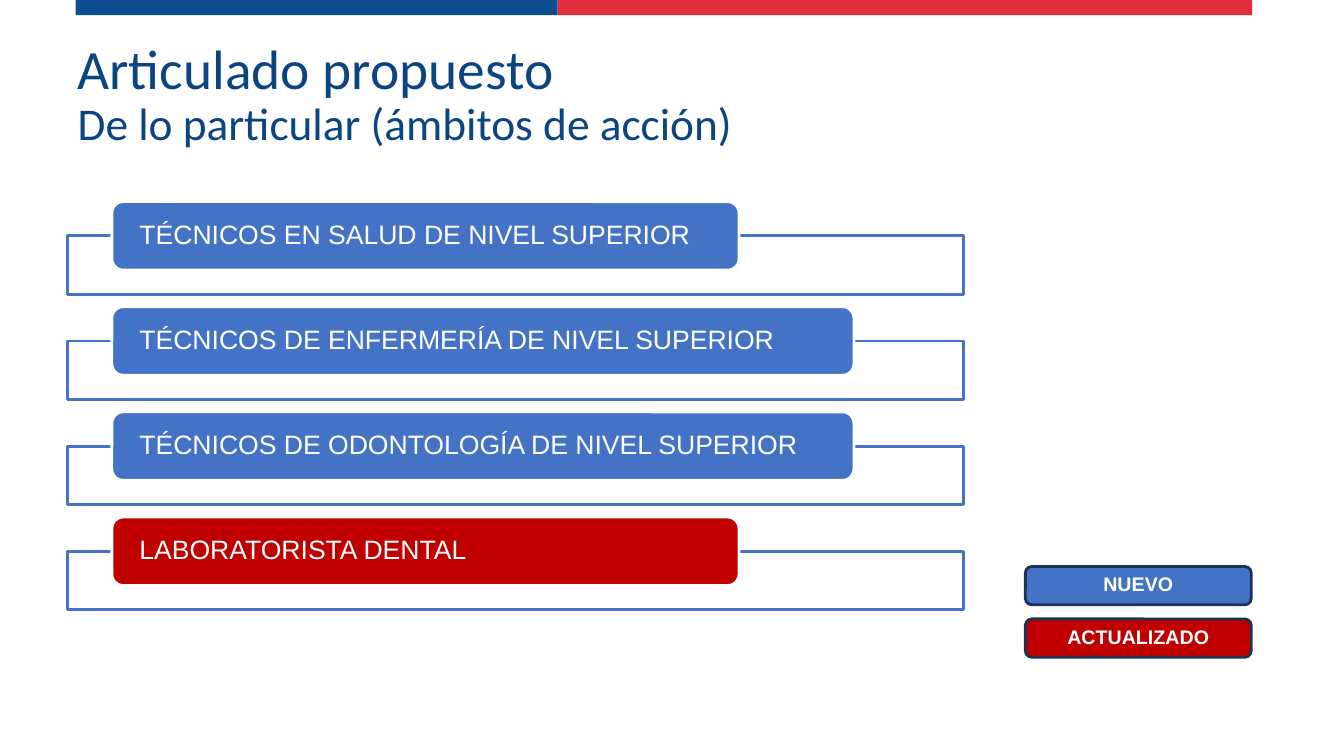
from pptx import Presentation
from pptx.dml.color import RGBColor
from pptx.enum.shapes import MSO_SHAPE
from pptx.enum.text import MSO_ANCHOR, MSO_AUTO_SIZE, PP_ALIGN
from pptx.util import Inches, Pt

COLORS = {
    "navy": "0F4E93",
    "red": "E22D3B",
    "title": "0B4581",
    "new": "4472C4",
    "updated": "C00000",
    "outline": "1E3256",
    "white": "FFFFFF",
}

FIELDS = [
    ("TÉCNICOS EN SALUD DE NIVEL SUPERIOR", 6.22, "new"),
    ("TÉCNICOS DE ENFERMERÍA DE NIVEL SUPERIOR", 7.36, "new"),
    ("TÉCNICOS DE ODONTOLOGÍA DE NIVEL SUPERIOR", 7.36, "new"),
    ("LABORATORISTA DENTAL", 6.22, "updated"),
]
FIELD_TOP, FIELD_STEP = 2, 1.043

LEGEND = [("NUEVO", "new"), ("ACTUALIZADO", "updated")]
LEGEND_TOP, LEGEND_STEP = 5.62, 0.52


def color(name):
    return RGBColor.from_string(COLORS[name])


def add_box(slide, kind, left, top, width, height, fill, line=None):
    shape = slide.shapes.add_shape(
        kind, Inches(left), Inches(top), Inches(width), Inches(height))
    shape.shadow.inherit = False
    shape.fill.solid()
    shape.fill.fore_color.rgb = color(fill)
    if line:
        shape.line.color.rgb = color(line)
        shape.line.width = Pt(2)
    else:
        shape.line.fill.background()
    return shape


def write_label(shape, text, size, alignment, inset, bold=False):
    frame = shape.text_frame
    frame.word_wrap = True
    frame.vertical_anchor = MSO_ANCHOR.MIDDLE
    frame.margin_left = frame.margin_right = Inches(inset)
    frame.margin_top = frame.margin_bottom = 0
    paragraph = frame.paragraphs[0]
    paragraph.text = text
    paragraph.alignment = alignment
    paragraph.line_spacing = 0.9
    paragraph.font.name = "Arial"
    paragraph.font.size = Pt(size)
    paragraph.font.bold = bold
    paragraph.font.color.rgb = color("white")


def add_title(slide, heading, subheading):
    title = slide.shapes.title
    title.left, title.top = Inches(0.67), Inches(0.65)
    title.width, title.height = Inches(9.39), Inches(0.6)
    frame = title.text_frame
    frame.auto_size = MSO_AUTO_SIZE.NONE
    frame.word_wrap = True
    frame.vertical_anchor = MSO_ANCHOR.MIDDLE
    paragraph = frame.paragraphs[0]
    paragraph.alignment = PP_ALIGN.LEFT
    paragraph.line_spacing = 0.9
    paragraph.font.name = "Calibri"
    paragraph.font.size = Pt(39.6)
    paragraph.font.color.rgb = color("title")
    paragraph.add_run().text = heading
    paragraph.add_line_break()
    run = paragraph.add_run()
    run.text = subheading
    run.font.size = Pt(32.4)


def add_field(slide, top, text, width, fill):
    add_box(slide, MSO_SHAPE.RECTANGLE, 0.67, top + 0.34, 8.89, 0.58, "white", "new")
    label = add_box(
        slide, MSO_SHAPE.ROUNDED_RECTANGLE, 1.11, top, width, 0.68, fill, "white")
    write_label(label, text, 19, PP_ALIGN.LEFT, 0.24)


def add_legend_entry(slide, top, text, fill):
    entry = add_box(
        slide, MSO_SHAPE.ROUNDED_RECTANGLE, 10.17, top, 2.24, 0.38, fill, "outline")
    write_label(entry, text, 14, PP_ALIGN.CENTER, 0.1, bold=True)


def main():
    presentation = Presentation()
    presentation.slide_width = Inches(13.33)
    presentation.slide_height = Inches(7.5)
    slide = presentation.slides.add_slide(presentation.slide_layouts[5])

    add_box(slide, MSO_SHAPE.RECTANGLE, 0.75, 0, 4.78, 0.15, "navy")
    add_box(slide, MSO_SHAPE.RECTANGLE, 5.53, 0, 6.89, 0.15, "red")
    add_title(slide, "Articulado propuesto", "De lo particular (ámbitos de acción)")
    for index, field in enumerate(FIELDS):
        add_field(slide, FIELD_TOP + index * FIELD_STEP, *field)
    for index, entry in enumerate(LEGEND):
        add_legend_entry(slide, LEGEND_TOP + index * LEGEND_STEP, *entry)

    presentation.save("out.pptx")


if __name__ == "__main__":
    main()
